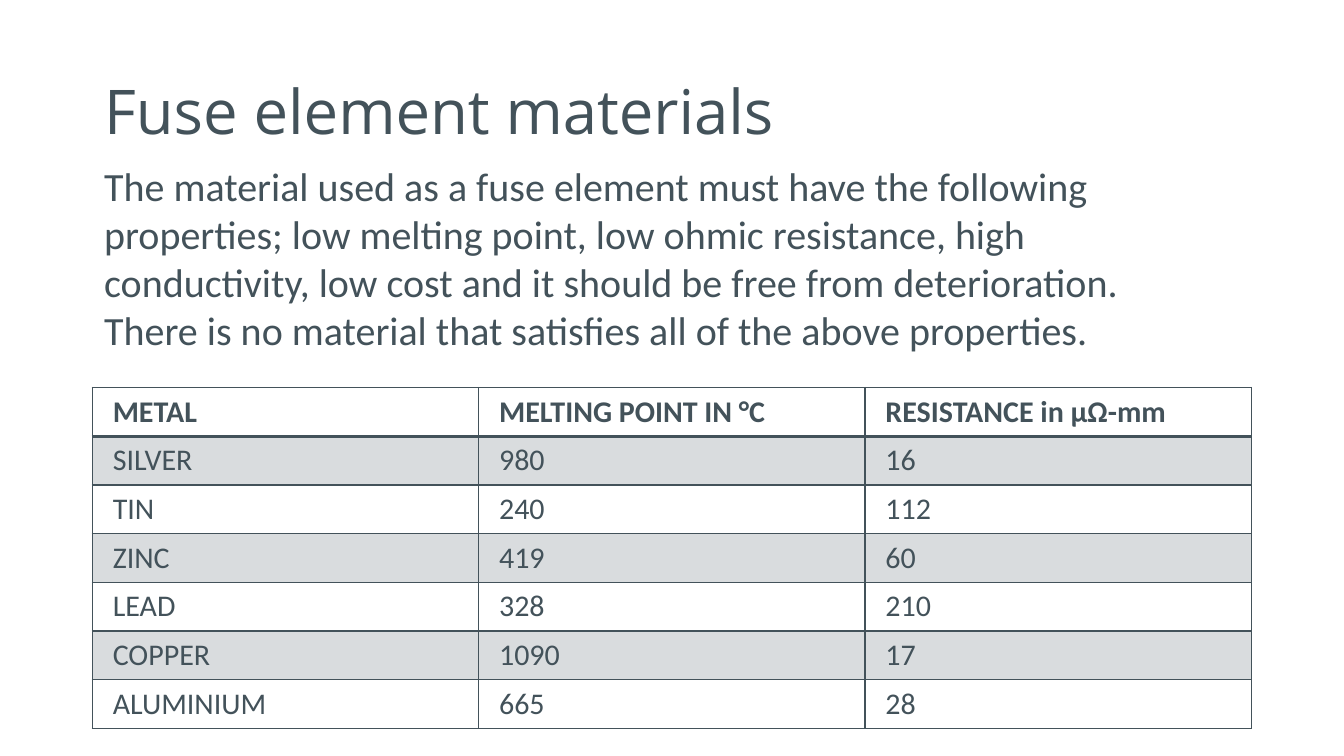
from dataclasses import dataclass

from lxml import etree
from pptx import Presentation
from pptx import util as u
from pptx.dml.color import RGBColor
from pptx.enum import text
from pptx.oxml import ns


@dataclass(frozen=True)
class Theme:
    ink: str = "43525A"
    band: str = "D9DCDE"
    head: str = "Open Sans"
    font: str = "Calibri"
    title: int = 37
    body: int = 24
    cell: int = 18


THEME = Theme()
LEFT, WIDTH = 0.77, 9.66
INTRO = [
    "The material used as a fuse element must have the following properties; "
    "low melting point, low ohmic resistance, high conductivity, low cost "
    "and it should be free from deterioration.",
    "There is no material that satisfies all of the above properties.",
]
METALS = [
    ("METAL", "MELTING POINT IN °C", "RESISTANCE in μΩ-mm"),
    ("SILVER", "980", "16"),
    ("TIN", "240", "112"),
    ("ZINC", "419", "60"),
    ("LEAD", "328", "210"),
    ("COPPER", "1090", "17"),
    ("ALUMINIUM", "665", "28"),
]


def style(para, size, font=THEME.font, bold=False):
    para.font.size = u.Pt(size)
    para.font.name = font
    para.font.bold = bold
    para.font.color.rgb = RGBColor.from_string(THEME.ink)


def add_text(slide, top, height, lines, size, font=THEME.font,
             anchor=text.MSO_ANCHOR.TOP, spacing=1.0):
    box = slide.shapes.add_textbox(
        u.Inches(LEFT), u.Inches(top), u.Inches(WIDTH), u.Inches(height))
    frame = box.text_frame
    frame.word_wrap = True
    frame.vertical_anchor = anchor
    frame.text = "\n".join(lines)
    for para in frame.paragraphs:
        para.line_spacing = spacing
        style(para, size, font)


def add_edge(cell, side, width):
    props = cell._tc.get_or_add_tcPr()
    line = etree.SubElement(props, ns.qn(f"a:ln{side}"), w=str(u.Pt(width)))
    fill = etree.SubElement(line, ns.qn("a:solidFill"))
    etree.SubElement(fill, ns.qn("a:srgbClr"), val=THEME.ink)


def fill_cell(cell, label, row):
    cell.text = label
    cell.margin_left = cell.margin_right = u.Inches(0.17)
    cell.margin_top = cell.margin_bottom = u.Inches(0.05)
    style(cell.text_frame.paragraphs[0], THEME.cell, bold=row == 0)
    widths = {"L": 1, "R": 1, "T": 2 if row == 1 else 1, "B": 2 if row == 0 else 1}
    for side, width in widths.items():
        add_edge(cell, side, width)
    if row % 2:
        cell.fill.solid()
        cell.fill.fore_color.rgb = RGBColor.from_string(THEME.band)
    else:
        cell.fill.background()


def add_grid(slide, top, height, rows):
    table = slide.shapes.add_table(
        len(rows), len(rows[0]), u.Inches(LEFT), u.Inches(top),
        u.Inches(WIDTH), u.Inches(height)).table
    table.first_row = table.horz_banding = False
    for row, labels in enumerate(rows):
        for col, label in enumerate(labels):
            fill_cell(table.cell(row, col), label, row)


def main():
    deck = Presentation()
    deck.slide_width, deck.slide_height = u.Inches(11.2), u.Inches(6.3)
    slide = deck.slides.add_slide(deck.slide_layouts[6])
    add_text(slide, 0.34, 1.22, ["Fuse element materials"], THEME.title,
             THEME.head, text.MSO_ANCHOR.MIDDLE, 0.9)
    add_grid(slide, 3.23, 2.84, METALS)
    add_text(slide, 1.3, 1.72, INTRO, THEME.body)
    deck.save("out.pptx")


if __name__ == "__main__":
    main()
